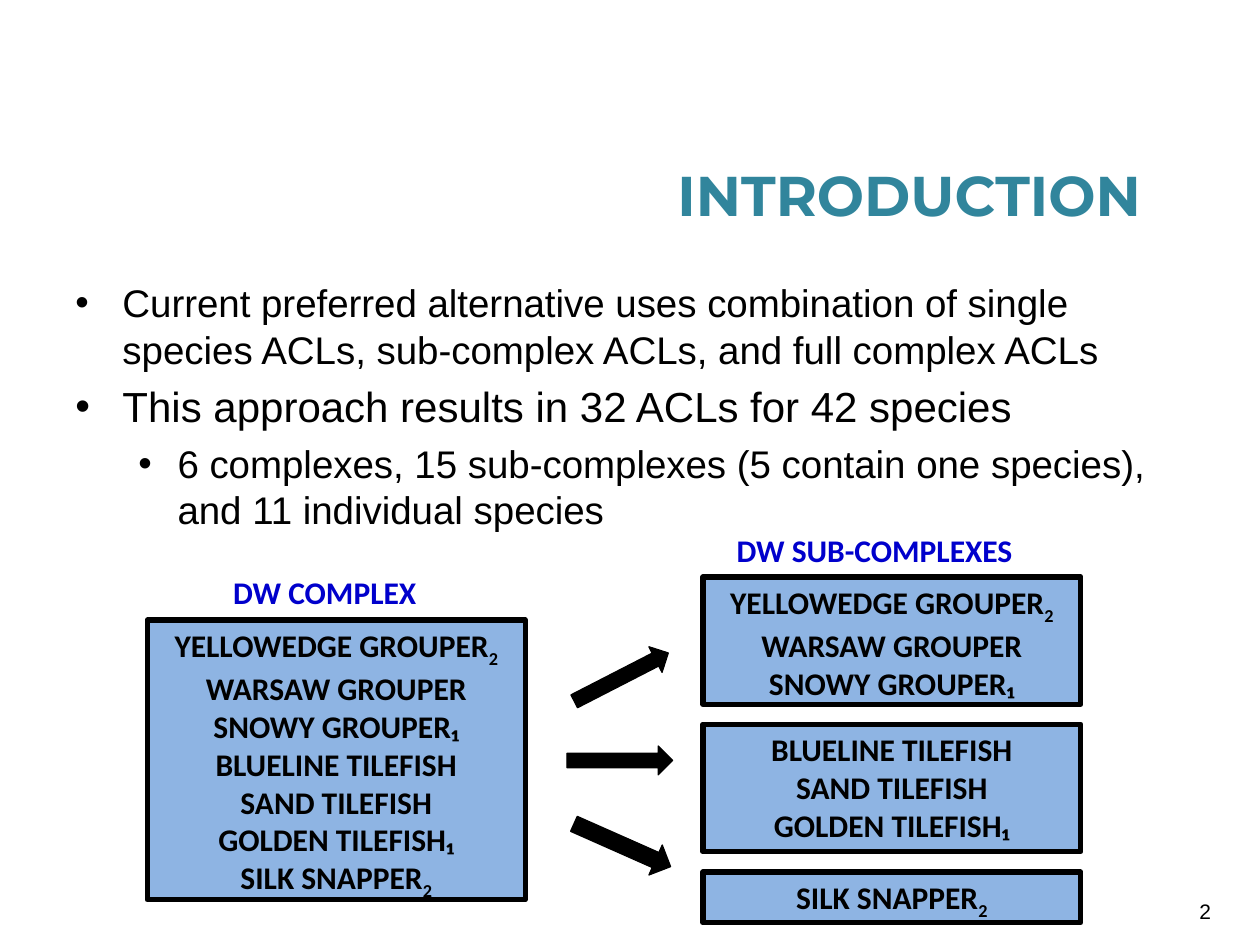
import pptx
import pptx.util
import pptx.dml.color
import pptx.enum.shapes
import pptx.enum.text
from lxml import etree

Cm, Pt = pptx.util.Cm, pptx.util.Pt
ALIGN = pptx.enum.text.PP_ALIGN
KIND = pptx.enum.shapes.MSO_SHAPE
HUES = {"title": "31859C", "text": "000000", "label": "0000CC",
        "box": "8EB4E3", "line": "000000"}


def hue(name):
    return pptx.dml.color.RGBColor.from_string(HUES[name])


def add_run(para, text, size, face, tone, bold=False):
    run = para.add_run()
    run.text = text
    run.font.size = Pt(size)
    run.font.name = face
    run.font.bold = bold
    run.font.color.rgb = hue(tone)
    return run


deck = pptx.Presentation()
deck.slide_width, deck.slide_height = Cm(25.4), Cm(19.05)
slide = deck.slides.add_slide(deck.slide_layouts[5])
shapes = slide.shapes

# Title
title = shapes.title
title.left, title.top, title.width, title.height = Cm(6.55), Cm(2.74), Cm(16.71), Cm(2.34)
title.text_frame.vertical_anchor = pptx.enum.text.MSO_ANCHOR.MIDDLE
para = title.text_frame.paragraphs[0]
para.alignment = ALIGN.RIGHT
add_run(para, "INTRODUCTION", 32, "Montserrat", "title", True)

# Bullets: text, size, left margin and hanging indent in cm
points = [
    ("Current preferred alternative uses combination of single species ACLs, "
     "sub-complex ACLs, and full complex ACLs", 22, 0.95, 0.95),
    ("This approach results in 32 ACLs for 42 species", 24, 0.95, 0.95),
    ("6 complexes, 15 sub-complexes (5 contain one species), "
     "and 11 individual species", 22, 2.06, 0.79),
]
frame = shapes.add_textbox(Cm(1.27), Cm(5.51), Cm(23.06), Cm(11.43)).text_frame
frame.word_wrap = True
for i, (text, size, left, hang) in enumerate(points):
    para = frame.add_paragraph() if i else frame.paragraphs[0]
    if i:
        para.space_before = Pt(5)
    props = para._p.get_or_add_pPr()
    props.set("marL", str(Cm(left)))
    props.set("indent", str(-Cm(hang)))
    etree.SubElement(props, pptx.oxml.ns.qn("a:buFont")).set("typeface", "Arial")
    etree.SubElement(props, pptx.oxml.ns.qn("a:buChar")).set("char", "•")
    add_run(para, text, size, "Arial", "text")

# Species boxes: left, top, height, then lines of (name, subscript)
yellow = ("YELLOWEDGE GROUPER", "2")
warsaw = ("WARSAW GROUPER SNOWY GROUPER₁", "")
tiles = [("BLUELINE TILEFISH", ""), ("SAND TILEFISH", ""), ("GOLDEN TILEFISH₁", "")]
silk = ("SILK SNAPPER", "2")
boxes = [
    (2.97, 12.5, 5.64, [yellow, warsaw, *tiles, silk]),
    (14.17, 11.63, 2.57, [yellow, warsaw]),
    (14.17, 14.6, 2.57, tiles),
    (14.17, 17.58, 1.02, [silk]),
]
for left, top, high, rows in boxes:
    box = shapes.add_shape(KIND.RECTANGLE, Cm(left), Cm(top), Cm(7.62), Cm(high))
    box.shadow.inherit = False
    box.fill.solid()
    box.fill.fore_color.rgb = hue("box")
    box.line.color.rgb = hue("line")
    box.line.width = Pt(3)
    frame = box.text_frame
    frame.word_wrap = True
    frame.vertical_anchor = pptx.enum.text.MSO_ANCHOR.TOP
    for i, (name, sub) in enumerate(rows):
        para = frame.add_paragraph() if i else frame.paragraphs[0]
        para.alignment = ALIGN.CENTER
        add_run(para, name, 18, "Calibri", "text", True)
        if sub:
            run = add_run(para, sub, 18, "Calibri", "text", True)
            run.font._element.set("baseline", "-25000")

# Box labels and page number
notes = [
    ("DW COMPLEX", 4.45, 11.43, 4.24, 18, "Calibri", "label", True),
    ("DW SUB-COMPLEXES", 14.6, 10.59, 6.12, 18, "Calibri", "label", True),
    ("2", 23.93, 17.98, 1.3, 12, "Arial", "text", False),
]
for text, left, top, wide, size, face, tone, bold in notes:
    frame = shapes.add_textbox(Cm(left), Cm(top), Cm(wide), Cm(0.8)).text_frame
    frame.word_wrap = False
    add_run(frame.paragraphs[0], text, size, face, tone, bold)

# Arrows from the complex to its parts: left, top, height, turn
for left, top, high, turn in [(11.46, 13.36, 0.58, -27.2),
                              (11.43, 15.04, 0.58, 0),
                              (11.48, 16.71, 0.66, 23.9)]:
    arrow = shapes.add_shape(KIND.RIGHT_ARROW, Cm(left), Cm(top), Cm(2.13), Cm(high))
    arrow.rotation = turn
    arrow.shadow.inherit = False
    arrow.fill.solid()
    arrow.fill.fore_color.rgb = hue("line")
    arrow.line.color.rgb = hue("line")
    arrow.line.width = Pt(0.75)

deck.save("out.pptx")
